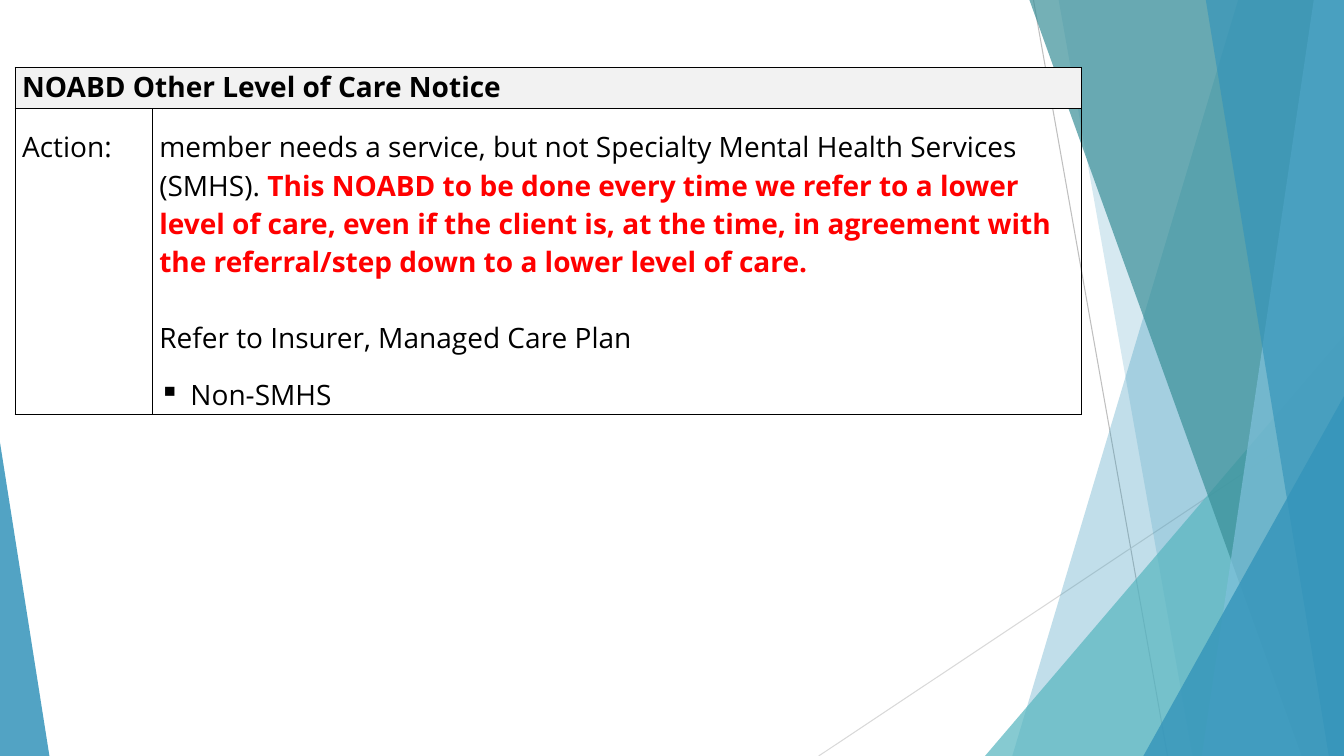
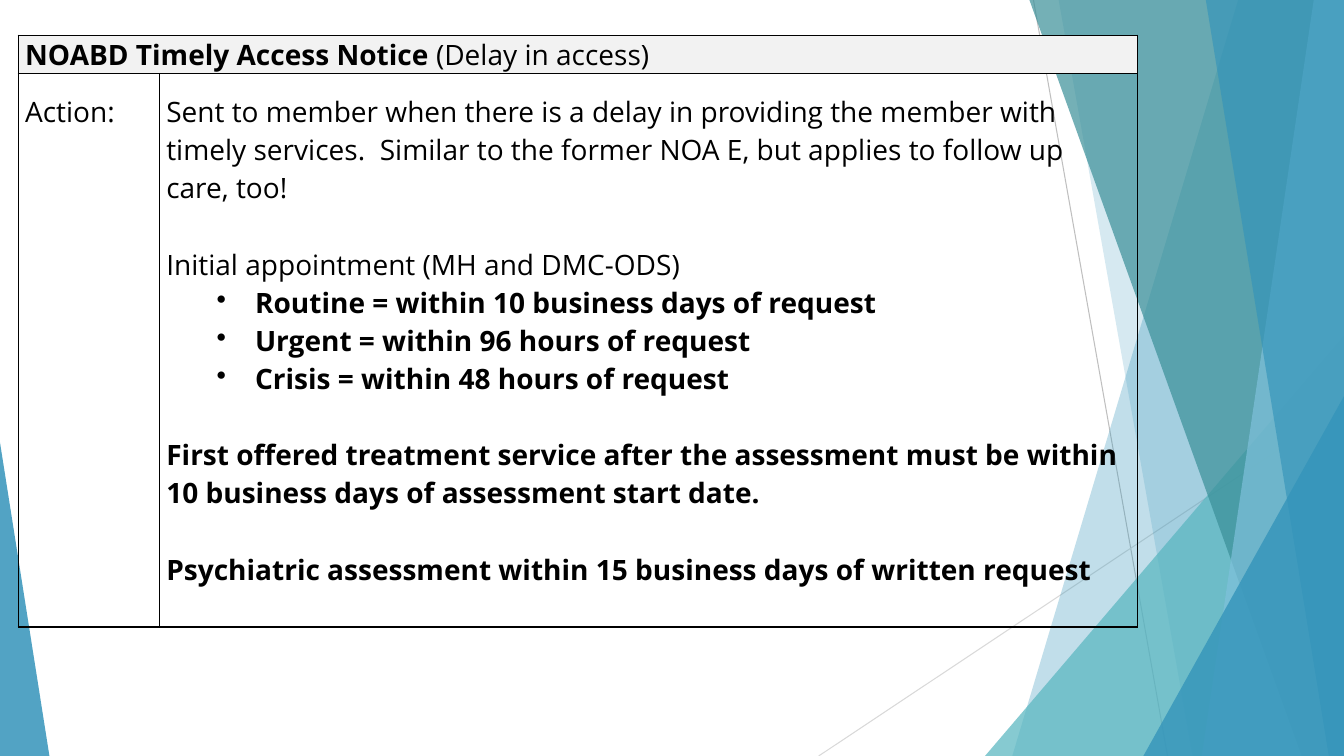
from lxml.etree import SubElement as Sub
from pptx import Presentation
from pptx.dml.color import RGBColor
from pptx.enum.shapes import MSO_CONNECTOR as Link, MSO_SHAPE as Shape
from pptx.oxml.ns import qn
from pptx.util import Inches, Pt

WIDE, HIGH = 13.33, 7.5
BLUE, TEAL, DEEP, SKY = "3494BA", "58B6C0", "3A8F98", "7FC1DB"
BLACK, RED, GREY = "000000", "FF0000", "F2F2F2"
FACE = {"name": "Open Sans", "size": Pt(20)}
INSET = {"margin_left": Inches(0.07), "margin_right": Inches(0.07),
         "margin_top": 0, "margin_bottom": 0}
DROP = {"margin_top": Inches(0.19)}
PLAIN = {"first_row": False, "horz_banding": False}
HALF, FULL = Pt(13.6), Pt(27.2)

LINES = [((10.25, 0), (11.58, HIGH), "BFBFBF"),
         ((WIDE, 4.03), (8.12, HIGH), "D9D9D9")]
PANES = [("band", 12.28, 10.04, BLUE, 30),
         ("band", 10.5, 11.83, BLUE, 20),
         ("wedge", 9.77, 3.33, 3.56, 1, TEAL, 72),
         ("band", 10.21, 12.91, DEEP, 70),
         ("band", 13.03, 11.92, SKY, 70),
         ("band", 11.96, 13.18, BLUE, 65),
         ("wedge", 11.34, 3.93, 1.99, 1, BLUE, 80),
         ("wedge", 0, 4.39, 0.49, 0, BLUE, 85)]


def tint(code):
    return RGBColor.from_string(code)


def apply(item, *styles):
    for style in styles:
        for key, value in style.items():
            setattr(item, key, value)


def glaze(shape, code, alpha):
    shape.shadow.inherit = False
    shape.line.fill.background()
    shape.fill.solid()
    shape.fill.fore_color.rgb = tint(code)
    for node in shape.fill._xPr.iter(qn("a:srgbClr")):
        Sub(node, qn("a:alpha"), val=str(alpha * 1000))


def band(slide, top, base, code, alpha):
    path = slide.shapes.build_freeform(Inches(top), 0)
    path.add_line_segments([(Inches(x), Inches(y)) for x, y in
                            [(WIDE, 0), (WIDE, HIGH), (base, HIGH)]])
    glaze(path.convert_to_shape(), code, alpha)


def wedge(slide, left, top, width, peak, code, alpha):
    shape = slide.shapes.add_shape(
        Shape.ISOSCELES_TRIANGLE, Inches(left), Inches(top),
        Inches(width), Inches(HIGH - top))
    shape.adjustments[0] = peak
    glaze(shape, code, alpha)


def rule(slide, start, end, code):
    line = slide.shapes.add_connector(
        Link.STRAIGHT, *[Inches(n) for n in start + end])
    line.line.width = Pt(0.75)
    line.line.color.rgb = tint(code)
    Sub(line._element.spPr, qn("a:effectLst"))


def backdrop(slide):
    for line in LINES:
        rule(slide, *line)
    makers = {"band": band, "wedge": wedge}
    for kind, *spec_args in PANES:
        makers[kind](slide, *spec_args)


def bullet(para, mark, left, hang):
    props = para._p.get_or_add_pPr()
    props.set("marL", str(Inches(left)))
    props.set("indent", str(-Inches(hang)))
    Sub(props, qn("a:buChar"), char=mark)


def write(cell, paras):
    frame = cell.text_frame
    for at, (runs, mark, style) in enumerate(paras):
        para = frame.add_paragraph() if at else frame.paragraphs[0]
        if mark:
            bullet(para, *mark)
        apply(para, style)
        for text, bold, code in runs:
            run = para.add_run()
            run.text = text
            apply(run.font, FACE, {"bold": bold})
            run.font.color.rgb = tint(code)


def edge(cell):
    props = cell._tc.get_or_add_tcPr()
    for at, side in enumerate(["lnL", "lnR", "lnT", "lnB"]):
        line = props.makeelement(qn("a:" + side), w=str(Pt(1)))
        fill = Sub(line, qn("a:solidFill"))
        Sub(fill, qn("a:srgbClr"), val=BLACK)
        props.insert(at, line)


def notice(slide, left, top, cols, rows, head, body):
    table = slide.shapes.add_table(
        2, 2, Inches(left), Inches(top),
        Inches(sum(cols)), Inches(sum(rows))).table
    apply(table, PLAIN)
    for col, width in zip(table.columns, cols):
        col.width = Inches(width)
    for row, height in zip(table.rows, rows):
        row.height = Inches(height)
    table.cell(0, 0).merge(table.cell(0, 1))
    for at, cell in enumerate(table.iter_cells()):
        apply(cell, INSET, DROP if at > 1 else {})
        if at > 1:
            cell.fill.background()
        else:
            cell.fill.solid()
            cell.fill.fore_color.rgb = tint(GREY)
        edge(cell)
    write(table.cell(0, 0), [para(*head)])
    write(table.cell(1, 0), [para(run("Action:"))])
    write(table.cell(1, 1), body)


def run(text, bold=False, code=BLACK):
    return text, bold, code


def para(*runs, mark=None, **style):
    return runs, mark, style


def main():
    deck = Presentation()
    apply(deck, {"slide_width": Inches(WIDE), "slide_height": Inches(HIGH)})

    level = [
        para(run("member needs a service, but not Specialty Mental Health "
                 "Services (SMHS). "),
             run("This NOABD to be done every time we refer to a lower level "
                 "of care, even if the client is, at the time, in agreement "
                 "with the referral/step down to a lower level of care.",
                 True, RED)),
        para(run("Refer to Insurer, Managed Care Plan"),
             space_before=HALF, line_spacing=1.5),
        para(run("Non-SMHS"), mark=("▪", 0.31, 0.31), line_spacing=1.5)]
    limits = [("Routine", "10 business days"), ("Urgent", "96 hours"),
              ("Crisis", "48 hours")]
    timely = [
        para(run("Sent to member when there is a delay in providing the "
                 "member with timely services.  Similar to the former NOA E, "
                 "but applies to follow up care, too!")),
        para(run("Initial appointment (MH and DMC-ODS)"), space_before=FULL),
        *[para(run(f"{kind} = within {time} of request", True),
               mark=("•", 0.88, 0.38)) for kind, time in limits],
        para(run("First offered treatment service after the assessment must "
                 "be within 10 business days of assessment start date.",
                 True), space_before=FULL),
        para(run("Psychiatric assessment within 15 business days of written "
                 "request", True), space_before=FULL)]
    pages = [
        (0.15, 0.67, (1.36, 9.22), (0.41, 3.03),
         [run("NOABD Other Level of Care Notice", True)], level),
        (0.18, 0.35, (1.4, 9.7), (0.38, 5.49),
         [run("NOABD Timely Access Notice", True),
          run(" (Delay in access)")], timely)]
    for page in pages:
        slide = deck.slides.add_slide(deck.slide_layouts[6])
        backdrop(slide)
        notice(slide, *page)
    deck.save("out.pptx")


if __name__ == "__main__":
    main()
